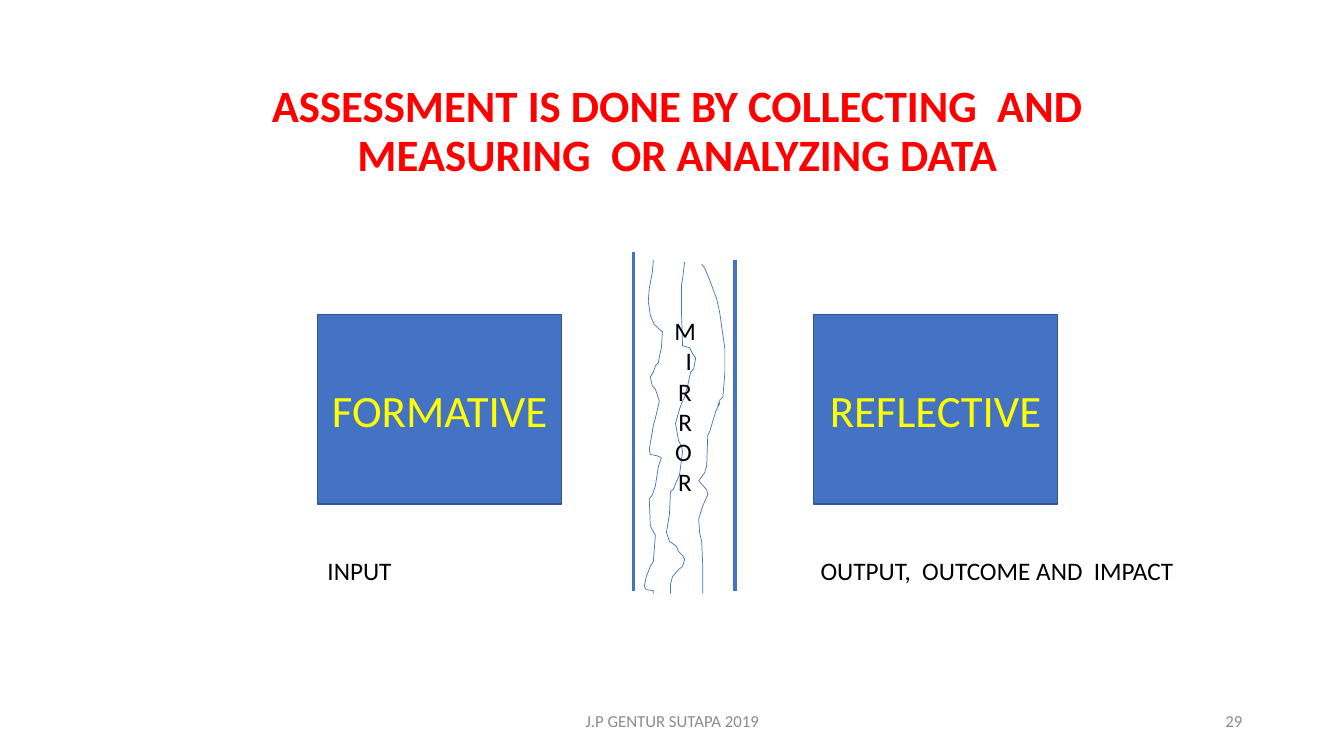
import pptx
import pptx.util
import pptx.dml.color
import pptx.enum.shapes
import pptx.enum.text
import pptx.oxml

Inches = pptx.util.Inches
Pt = pptx.util.Pt
RGBColor = pptx.dml.color.RGBColor
ALIGN = pptx.enum.text.PP_ALIGN
ANCHOR = pptx.enum.text.MSO_ANCHOR
SIZING = pptx.enum.text.MSO_AUTO_SIZE

RED = RGBColor(0xFF, 0, 0)
YELLOW = RGBColor(0xFF, 0xFF, 0)
BLACK = RGBColor(0, 0, 0)
GREY = RGBColor(0x8C, 0x8C, 0x8C)
BLUE = RGBColor(0x44, 0x72, 0xC4)
NAVY = RGBColor(0x32, 0x54, 0x91)

HEAD = {"size": Pt(32), "bold": True}
BLOCK = {"size": Pt(32)}
LABEL = {"size": Pt(18)}
SMALL = {"size": Pt(12)}

# Crack points are inches from the top left of the mirror.
CRACKS = [
    [(0.2, 0.08), (0.19, 0.2), (0.16, 0.36), (0.15, 0.49), (0.17, 0.63),
     (0.21, 0.72), (0.25, 0.76), (0.29, 0.79), (0.28, 0.95), (0.26, 1.04),
     (0.25, 1.1), (0.22, 1.13), (0.2, 1.19), (0.17, 1.24), (0.19, 1.33),
     (0.22, 1.36), (0.26, 1.48), (0.22, 1.65), (0.2, 1.72), (0.16, 1.96),
     (0.17, 2.01), (0.23, 2.02), (0.28, 2.04), (0.25, 2.13), (0.22, 2.32),
     (0.19, 2.41), (0.16, 2.45), (0.17, 2.72), (0.22, 2.81), (0.2, 3.07),
     (0.17, 3.12), (0.13, 3.22), (0.11, 3.32), (0.13, 3.35), (0.2, 3.36),
     (0.2, 3.39)],
    [(0.51, 0.1), (0.49, 0.27), (0.48, 0.32), (0.48, 0.63), (0.49, 0.93),
     (0.56, 0.95), (0.59, 1.01), (0.62, 1.05), (0.6, 1.16), (0.57, 1.19),
     (0.54, 1.33), (0.51, 1.44), (0.48, 1.5), (0.46, 1.56), (0.42, 1.7),
     (0.45, 1.87), (0.48, 1.93), (0.49, 1.98), (0.46, 2.21), (0.42, 2.3),
     (0.4, 2.35), (0.37, 2.38), (0.36, 2.6), (0.33, 2.78), (0.36, 2.87),
     (0.43, 2.92), (0.45, 2.97), (0.49, 3.01), (0.51, 3.05), (0.49, 3.12),
     (0.45, 3.15), (0.39, 3.22), (0.37, 3.3), (0.37, 3.39)],
    [(0.68, 0.12), (0.71, 0.16), (0.76, 0.28), (0.83, 0.47), (0.85, 0.56),
     (0.86, 0.61), (0.88, 0.75), (0.91, 0.96), (0.91, 1.2), (0.89, 1.44),
     (0.86, 1.47), (0.84, 1.53), (0.86, 1.5), (0.82, 1.58), (0.79, 1.68),
     (0.76, 1.78), (0.74, 1.82), (0.73, 2.12), (0.71, 2.19), (0.65, 2.27),
     (0.73, 2.36), (0.74, 2.41), (0.69, 2.52), (0.65, 2.65), (0.66, 2.79),
     (0.68, 2.87), (0.69, 3.1), (0.69, 3.39)],
]


def format_text(shape, text, looks, color, align=ALIGN.LEFT,
                anchor=ANCHOR.TOP, wrap=True, sizing=SIZING.NONE):
    """Fill a shape with one formatted paragraph and return it."""
    frame = shape.text_frame
    layout = {"word_wrap": wrap, "auto_size": sizing,
              "vertical_anchor": anchor}
    for name, value in layout.items():
        setattr(frame, name, value)
    para = frame.paragraphs[0]
    para.alignment = align
    run = para.add_run()
    run.text = text
    for name, value in {"name": "Calibri", **looks}.items():
        setattr(run.font, name, value)
    run.font.color.rgb = color
    return para


def add_text(slide, box, text, looks, color, **layout):
    shape = slide.shapes.add_textbox(*map(Inches, box))
    format_text(shape, text, looks, color, **layout)


def add_title(slide, box, text):
    title = slide.shapes.title
    for name, value in zip(("left", "top", "width", "height"), box):
        setattr(title, name, Inches(value))
    para = format_text(title, text, HEAD, RED, ALIGN.CENTER, ANCHOR.MIDDLE)
    para.line_spacing = 0.9


def add_block(slide, box, text):
    kind = pptx.enum.shapes.MSO_SHAPE.RECTANGLE
    block = slide.shapes.add_shape(kind, *map(Inches, box))
    block.shadow.inherit = False
    block.fill.solid()
    block.fill.fore_color.rgb = BLUE
    block.line.color.rgb = NAVY
    block.line.width = Pt(1)
    format_text(block, text, BLOCK, YELLOW, ALIGN.CENTER, ANCHOR.MIDDLE)


def add_edge(slide, x, top, end):
    kind = pptx.enum.shapes.MSO_CONNECTOR.STRAIGHT
    edge = slide.shapes.add_connector(kind, *map(Inches, (x, top, x, end)))
    edge.line.color.rgb = BLUE
    edge.line.width = Pt(2.25)
    effects = pptx.oxml.parse_xml(
        '<a:effectLst xmlns:a='
        '"http://schemas.openxmlformats.org/drawingml/2006/main"/>')
    edge._element.spPr.append(effects)


def add_crack(slide, left, top, points):
    spots = [(Inches(left + x), Inches(top + y)) for x, y in points]
    path = slide.shapes.build_freeform(*spots[0])
    path.add_line_segments(spots[1:], close=False)
    crack = path.convert_to_shape()
    crack.shadow.inherit = False
    crack.fill.background()
    crack.line.color.rgb = BLUE
    crack.line.width = Pt(0.5)


def add_mirror(slide, box):
    """Draw two edges with cracks between; the narrow text box stacks letters."""
    left, top, width, height = box
    add_edge(slide, left, top, top + height)
    for points in CRACKS:
        add_crack(slide, left, top, points)
    add_edge(slide, left + width, top + 0.08, top + height)
    add_text(slide, (left + 0.31, top + 0.58, 0.37, 1.92), "MIRROR", LABEL,
             BLACK, align=ALIGN.RIGHT, sizing=SIZING.SHAPE_TO_FIT_TEXT)


def add_footer(slide, top, height):
    add_text(slide, (4.42, top, 4.5, height), "J.P GENTUR SUTAPA 2019", SMALL,
             GREY, align=ALIGN.CENTER, anchor=ANCHOR.MIDDLE)
    add_text(slide, (9.42, top, 3, height), "29", SMALL, GREY,
             align=ALIGN.RIGHT, anchor=ANCHOR.MIDDLE)


def main():
    deck = pptx.Presentation()
    deck.slide_width = Inches(13.33)
    deck.slide_height = Inches(7.5)
    slide = deck.slides.add_slide(deck.slide_layouts[5])
    add_title(slide, (2.22, 0.69, 9, 1.25),
              "ASSESSMENT IS DONE BY COLLECTING  AND "
              "MEASURING  OR ANALYZING DATA")
    add_footer(slide, 6.95, 0.4)
    for left, text in ((3.15, "FORMATIVE "), (8.07, "REFLECTIVE")):
        add_block(slide, (left, 3.12, 2.42, 1.88), text)
    add_mirror(slide, (6.28, 2.5, 1.01, 3.36))
    add_text(slide, (8.04, 5.46, 3.73, 0.4), "OUTPUT,  OUTCOME AND  IMPACT",
             LABEL, BLACK, wrap=False, sizing=SIZING.SHAPE_TO_FIT_TEXT)
    add_text(slide, (3.15, 5.46, 1, 0.4), "INPUT", LABEL, BLACK,
             sizing=SIZING.SHAPE_TO_FIT_TEXT)
    deck.save("out.pptx")


if __name__ == "__main__":
    main()
